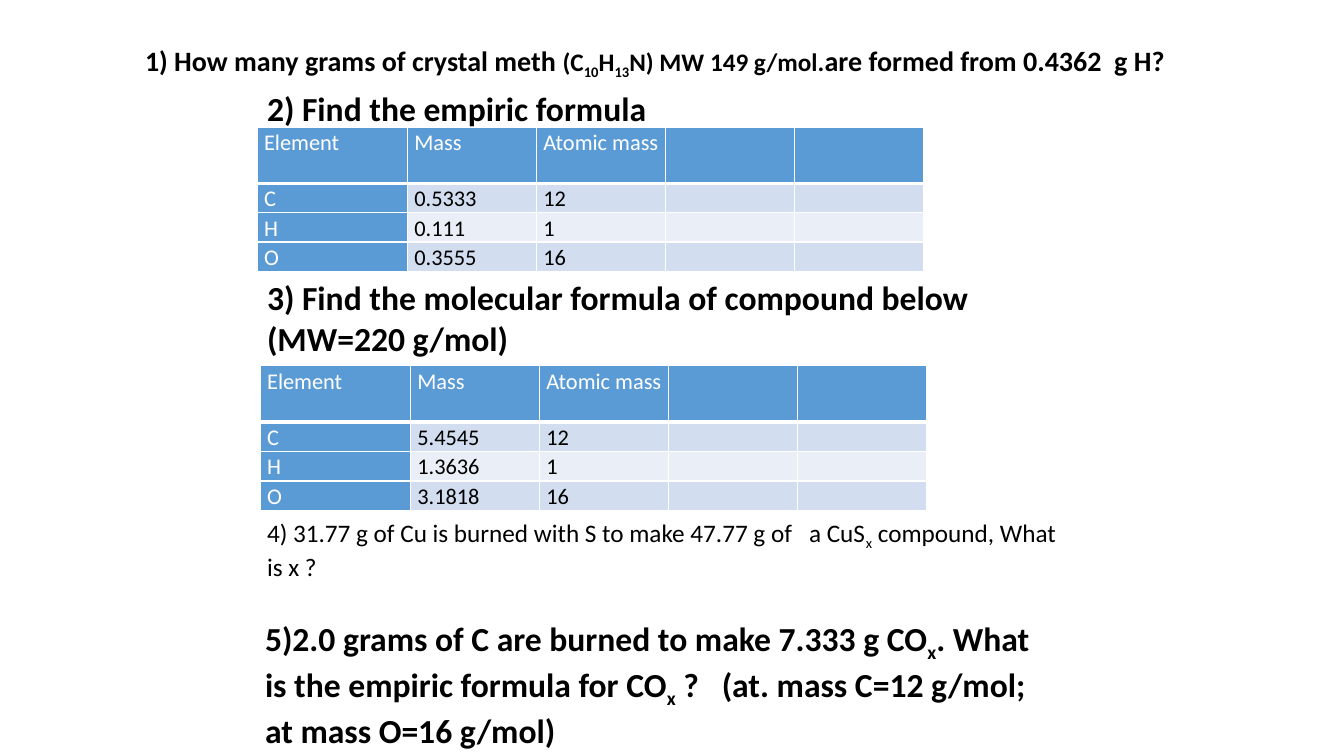
from dataclasses import dataclass

from lxml import etree
from pptx import Presentation
from pptx.dml.color import RGBColor
from pptx.enum import text
from pptx.oxml import ns
from pptx.util import Inches, Pt


@dataclass(frozen=True)
class Theme:
    font: str = "Calibri"
    ink: str = "000000"
    white: str = "FFFFFF"
    header: str = "5B9BD5"
    bands: tuple[str, str] = ("D2DEEF", "EAEFF7")
    heading: float = 24
    question: float = 20
    body: float = 18
    table: float = 16


@dataclass(frozen=True)
class Span:
    wording: str
    size: float
    bold: bool = True
    subscript: bool = False


@dataclass(frozen=True)
class Question:
    left: float
    top: float
    width: float
    height: float
    spans: tuple[Span, ...]


@dataclass(frozen=True)
class ElementTable:
    left: float
    top: float
    masses: tuple[str, str, str]


THEME = Theme()
HEADINGS = ("Element", "Mass", "Atomic mass", "", "")
ELEMENTS = (("C", "12"), ("H", "1"), ("O", "16"))
COLUMN_WIDTHS = (1.49, 1.28, 1.28, 1.28, 1.28)
ROW_HEIGHTS = (0.56, 0.29, 0.29, 0.29)


def formula(size: float, bold: bool, *parts: str) -> tuple[Span, ...]:
    """Make spans in which every second part is a subscript."""
    return tuple(Span(part, size, bold, index % 2 == 1) for index, part in enumerate(parts))


CRYSTAL_QUESTION = Question(1.34, 0.38, 10.54, 0.44, (
    Span("1) How many grams of crystal meth ", THEME.question),
    *formula(THEME.body, True, "(C", "10", "H", "13", "N) MW 149 g/mol."),
    Span("are formed from 0.4362  g H?", THEME.question),
))
EMPIRIC_TABLE = ElementTable(2.55, 1.26, ("0.5333", "0.111", "0.3555"))
EMPIRIC_QUESTION = Question(2.55, 0.82, 5.75, 0.5, (
    Span("2) Find the empiric formula", THEME.heading),
))
MOLECULAR_QUESTION = Question(2.55, 2.7, 8.25, 0.91, (
    Span("3) Find the molecular formula of compound below (MW=220 g/mol)", THEME.heading),
))
MOLECULAR_TABLE = ElementTable(2.58, 3.63, ("5.4545", "1.3636", "3.1818"))
COPPER_QUESTION = Question(2.55, 5.08, 8.11, 0.71, formula(
    THEME.body, False,
    "4) 31.77 g of Cu is burned with S to make 47.77 g of   a CuS", "x",
    " compound, What is x ?",
))
CARBON_QUESTION = Question(2.53, 6.08, 7.92, 1.42, formula(
    THEME.heading, True,
    "5)2.0 grams of C are burned to make 7.333 g CO", "x",
    ". What is the empiric formula for CO", "x",
    " ?   (at. mass C=12 g/mol; at mass O=16 g/mol)",
))


def add_span(paragraph, span: Span, color: str) -> None:
    run = paragraph.add_run()
    run.text = span.wording
    run.font.name = THEME.font
    run.font.size = Pt(span.size)
    run.font.bold = span.bold
    run.font.color.rgb = RGBColor.from_string(color)
    if span.subscript:
        run.font._element.set("baseline", "-25000")


def add_question(slide, question: Question) -> None:
    box = slide.shapes.add_textbox(
        Inches(question.left), Inches(question.top),
        Inches(question.width), Inches(question.height),
    )
    box.text_frame.word_wrap = True
    box.text_frame.auto_size = text.MSO_AUTO_SIZE.NONE
    for span in question.spans:
        add_span(box.text_frame.paragraphs[0], span, THEME.ink)


def add_borders(cell, bottom: float) -> None:
    properties = cell._tc.get_or_add_tcPr()
    for side, width in (("L", 1), ("R", 1), ("T", 1), ("B", bottom)):
        line = etree.SubElement(properties, ns.qn(f"a:ln{side}"), w=str(Pt(width)))
        fill = etree.SubElement(line, ns.qn("a:solidFill"))
        etree.SubElement(fill, ns.qn("a:srgbClr"), val=THEME.white)


def fill_cell(cell, wording: str, row: int, column: int) -> None:
    is_heading = row == 0 or column == 0
    add_borders(cell, 3 if row == 0 else 1)
    cell.fill.solid()
    fill = THEME.header if is_heading else THEME.bands[(row - 1) % 2]
    cell.fill.fore_color.rgb = RGBColor.from_string(fill)
    cell.margin_left = cell.margin_right = Inches(0.07)
    cell.margin_top = cell.margin_bottom = 0
    paragraph = cell.text_frame.paragraphs[0]
    paragraph.line_spacing = 1.07
    if wording:
        color = THEME.white if is_heading else THEME.ink
        add_span(paragraph, Span(wording, THEME.table, bold=False), color)
    else:
        etree.SubElement(paragraph._p, ns.qn("a:endParaRPr"), sz=str(int(THEME.table * 100)))


def add_element_table(slide, element_table: ElementTable) -> None:
    rows = [HEADINGS] + [
        (symbol, mass, atomic_mass, "", "")
        for (symbol, atomic_mass), mass in zip(ELEMENTS, element_table.masses)
    ]
    table = slide.shapes.add_table(
        len(rows), len(HEADINGS), Inches(element_table.left), Inches(element_table.top),
        Inches(sum(COLUMN_WIDTHS)), Inches(sum(ROW_HEIGHTS)),
    ).table
    for column, width in zip(table.columns, COLUMN_WIDTHS):
        column.width = Inches(width)
    for row, height in zip(table.rows, ROW_HEIGHTS):
        row.height = Inches(height)
    for row_index, row in enumerate(rows):
        for column_index, wording in enumerate(row):
            fill_cell(table.cell(row_index, column_index), wording, row_index, column_index)


def main() -> None:
    presentation = Presentation()
    presentation.slide_width = Inches(13.33)
    presentation.slide_height = Inches(7.5)
    slide = presentation.slides.add_slide(presentation.slide_layouts[6])
    add_question(slide, CRYSTAL_QUESTION)
    add_element_table(slide, EMPIRIC_TABLE)
    add_question(slide, EMPIRIC_QUESTION)
    add_question(slide, MOLECULAR_QUESTION)
    add_element_table(slide, MOLECULAR_TABLE)
    add_question(slide, COPPER_QUESTION)
    add_question(slide, CARBON_QUESTION)
    presentation.save("out.pptx")


if __name__ == "__main__":
    main()
